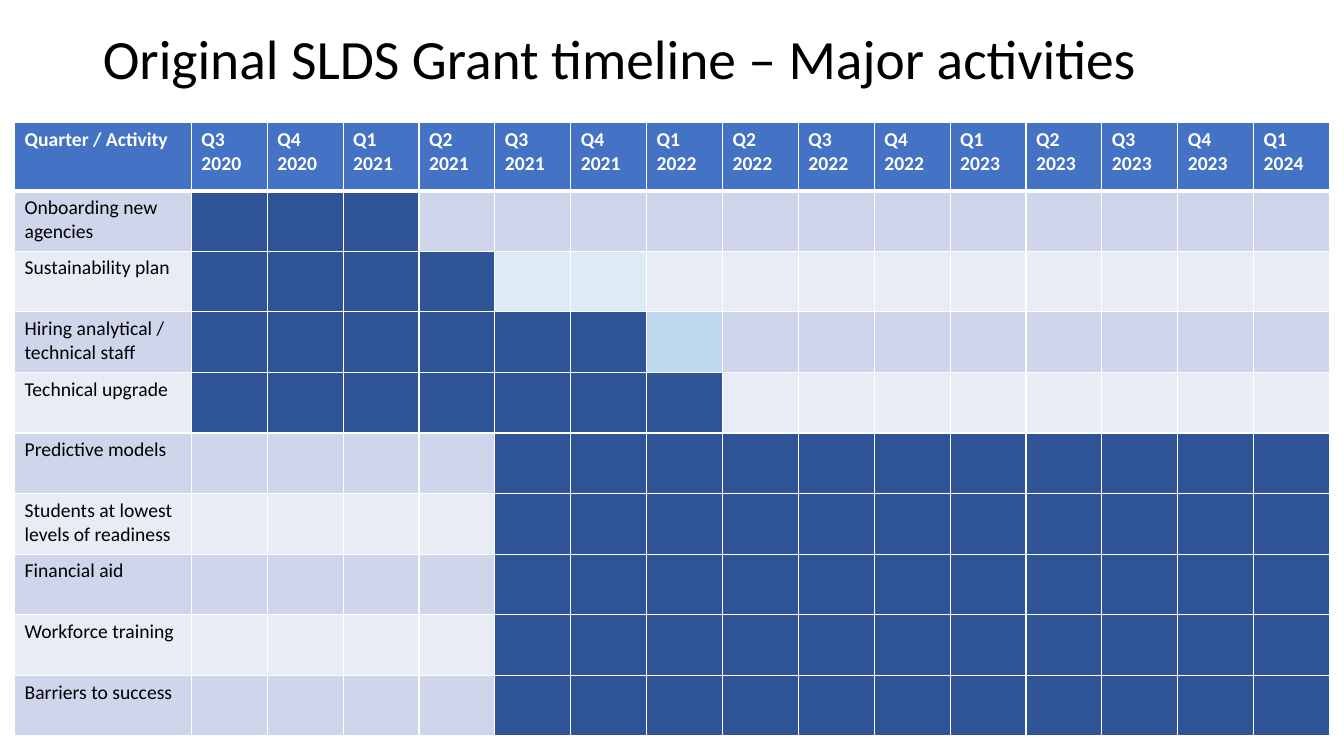
from lxml import etree
from pptx import Presentation
from pptx.dml.color import RGBColor
from pptx.enum.text import MSO_ANCHOR, PP_ALIGN
from pptx.oxml.ns import qn
from pptx.util import Pt

MIDDLE = MSO_ANCHOR.MIDDLE
TOP = MSO_ANCHOR.TOP
LEFT = PP_ALIGN.LEFT

BLACK = RGBColor(0x00, 0x00, 0x00)
WHITE = RGBColor(0xFF, 0xFF, 0xFF)
HEADER = RGBColor(0x44, 0x72, 0xC4)
BANDS = [RGBColor(0xCF, 0xD5, 0xEA), RGBColor(0xE9, 0xEB, 0xF5)]
ACTIVE = RGBColor(0x2F, 0x55, 0x97)
PALE = RGBColor(0xDE, 0xEB, 0xF7)
LIGHT = RGBColor(0xBD, 0xD7, 0xEE)

QUARTERS = 15
LABEL_WIDTH, QUARTER_WIDTH = 126.3, 54.2
HEADER_HEIGHT, ROW_HEIGHT = 48.4, 43.3

TITLE_FONT = {"name": "Calibri", "size": Pt(39.6)}
HEADER_FONT = {"name": "Calibri", "size": Pt(14), "bold": True}
LABEL_FONT = {"name": "Calibri", "size": Pt(14), "bold": False}

ACTIVITIES = [
    ("Onboarding new agencies", [(1, 3, ACTIVE)]),
    ("Sustainability plan", [(1, 4, ACTIVE), (5, 6, PALE)]),
    ("Hiring analytical / technical staff", [(1, 6, ACTIVE), (7, 7, LIGHT)]),
    ("Technical upgrade", [(1, 7, ACTIVE)]),
    ("Predictive models", [(5, QUARTERS, ACTIVE)]),
    ("Students at lowest levels of readiness", [(5, QUARTERS, ACTIVE)]),
    ("Financial aid", [(5, QUARTERS, ACTIVE)]),
    ("Workforce training", [(5, QUARTERS, ACTIVE)]),
    ("Barriers to success", [(5, QUARTERS, ACTIVE)]),
]


def write_text(tf, text, font, color):
    p = tf.paragraphs[0]
    p.alignment = LEFT
    r = p.add_run()
    r.text = text
    for name, value in font.items():
        setattr(r.font, name, value)
    r.font.color.rgb = color
    return p


def add_title(s, text):
    sp = s.shapes.title
    box = {"left": Pt(66.24), "top": Pt(14.4), "width": Pt(828), "height": Pt(59)}
    for name, value in box.items():
        setattr(sp, name, value)
    tf = sp.text_frame
    tf.word_wrap = True
    tf.vertical_anchor = MIDDLE
    write_text(tf, text, TITLE_FONT, BLACK).line_spacing = 0.9


def set_borders(cell, widths):
    tc_pr = cell._tc.get_or_add_tcPr()
    for side, width in widths.items():
        ln = etree.SubElement(tc_pr, qn("a:ln" + side), w=str(Pt(width)))
        fill = etree.SubElement(ln, qn("a:solidFill"))
        etree.SubElement(fill, qn("a:srgbClr"), val=str(WHITE))


def format_cell(cell, color, top=1, bottom=1):
    set_borders(cell, {"L": 1, "R": 1, "T": top, "B": bottom})
    cell.fill.solid()
    cell.fill.fore_color.rgb = color
    cell.vertical_anchor = TOP


def fill_header(table):
    labels = ["Quarter / Activity"]
    for i in range(2, QUARTERS + 2):
        labels.append(f"Q{i % 4 + 1} {2020 + i // 4}")
    for col, label in enumerate(labels):
        cell = table.cell(0, col)
        format_cell(cell, HEADER, bottom=3)
        write_text(cell.text_frame, label, HEADER_FONT, WHITE)


def fill_activity(table, row, label, spans):
    colors = [BANDS[(row - 1) % 2]] * (QUARTERS + 1)
    for first, last, color in spans:
        colors[first:last + 1] = [color] * (last - first + 1)
    for col, color in enumerate(colors):
        format_cell(table.cell(row, col), color, top=3 if row == 1 else 1)
    write_text(table.cell(row, 0).text_frame, label, LABEL_FONT, BLACK)


def add_timeline(s):
    width = LABEL_WIDTH + QUARTERS * QUARTER_WIDTH
    height = HEADER_HEIGHT + len(ACTIVITIES) * ROW_HEIGHT
    table = s.shapes.add_table(len(ACTIVITIES) + 1, QUARTERS + 1,
                               Pt(10.4), Pt(87.8), Pt(width), Pt(height)).table
    for i, col in enumerate(table.columns):
        col.width = Pt(QUARTER_WIDTH if i else LABEL_WIDTH)
    for i, row in enumerate(table.rows):
        row.height = Pt(ROW_HEIGHT if i else HEADER_HEIGHT)
    fill_header(table)
    for row, (label, spans) in enumerate(ACTIVITIES, 1):
        fill_activity(table, row, label, spans)


def main():
    prs = Presentation()
    prs.slide_width, prs.slide_height = Pt(960), Pt(540)
    s = prs.slides.add_slide(prs.slide_layouts[5])
    add_title(s, "Original SLDS Grant timeline – Major activities")
    add_timeline(s)
    prs.save("out.pptx")


if __name__ == "__main__":
    main()
